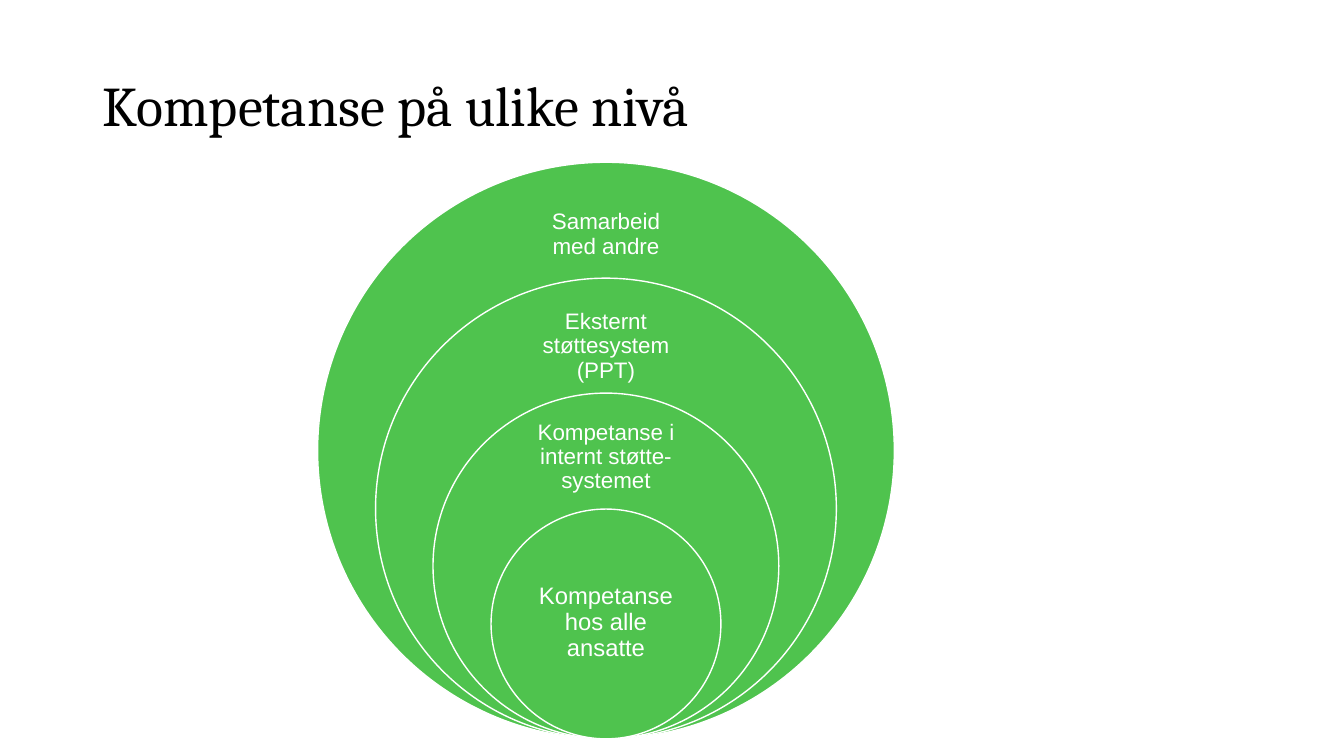
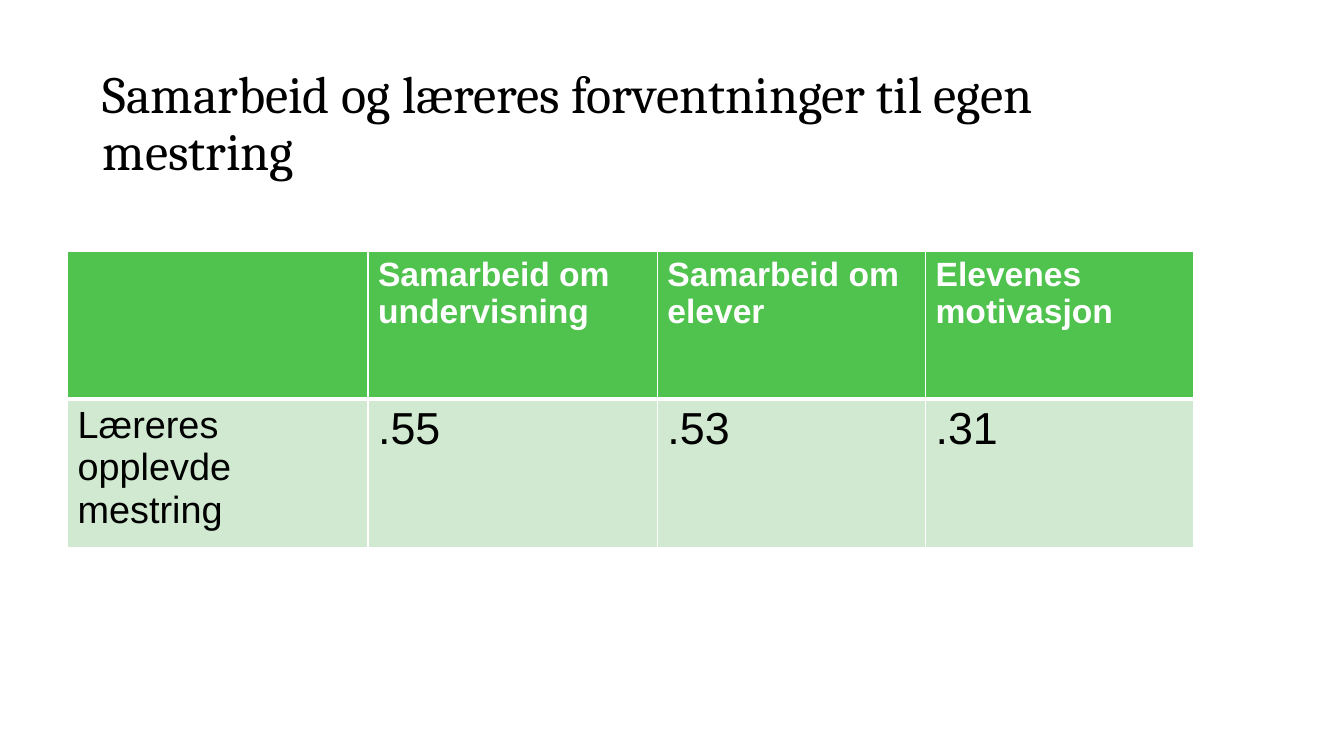
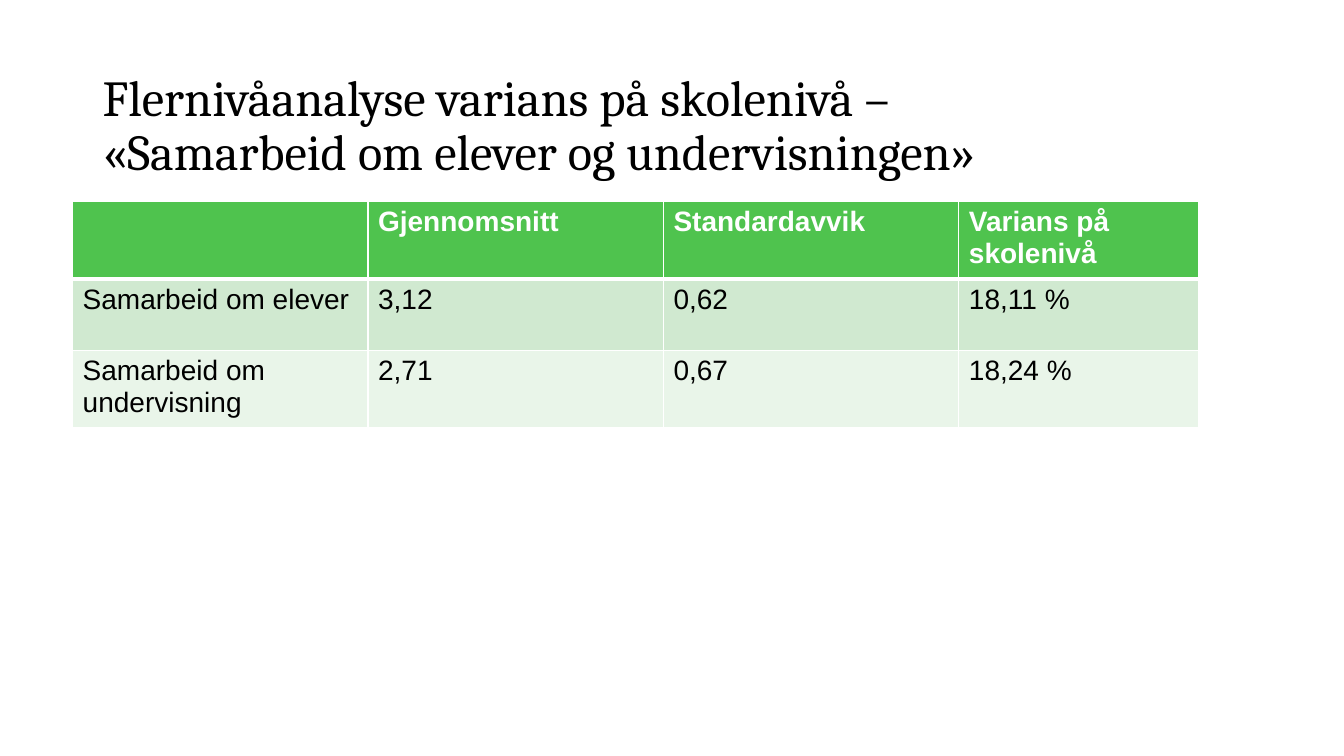
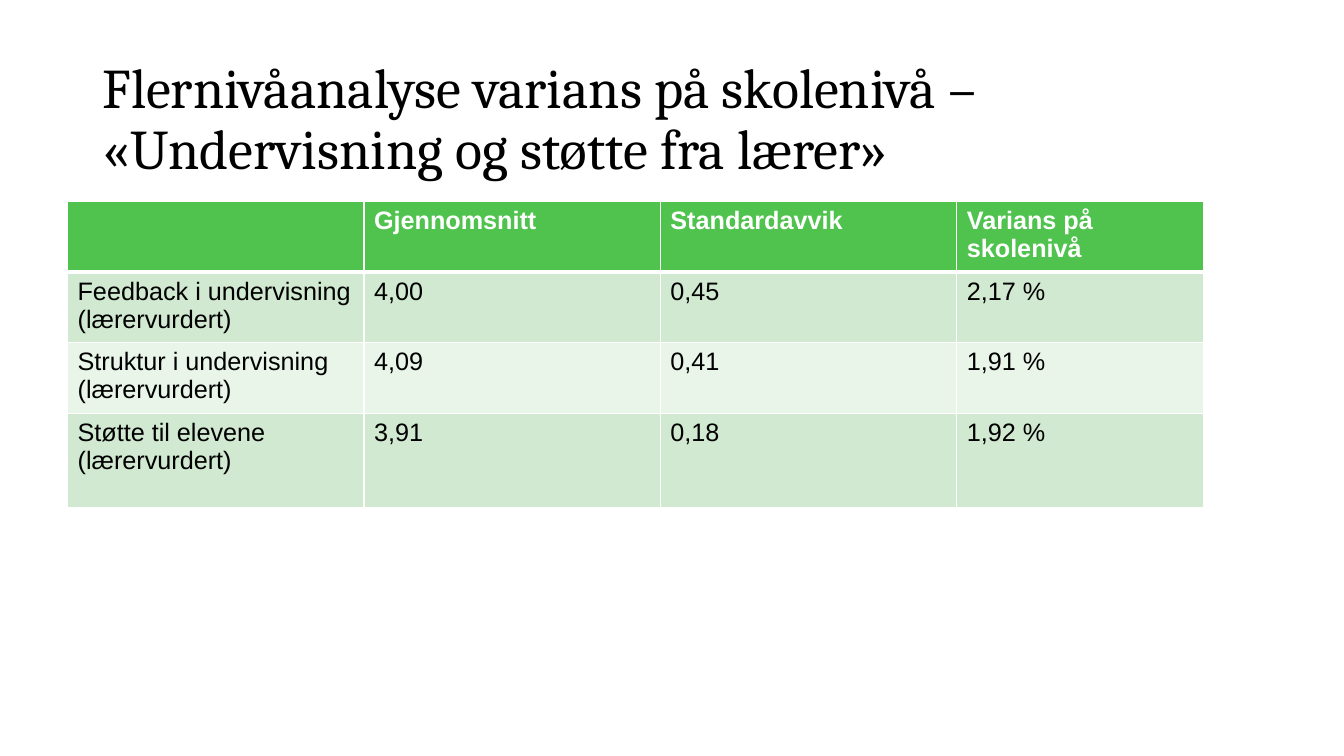
from dataclasses import dataclass

from lxml.etree import SubElement
from pptx import Presentation
from pptx.dml.color import RGBColor
from pptx.enum.shapes import MSO_SHAPE
from pptx.enum.text import MSO_ANCHOR, PP_ALIGN
from pptx.oxml.ns import qn
from pptx.util import Emu, Pt

EMU_PER_PX = 9144  # 100 px to the inch
BLANK_LAYOUT = 6


@dataclass(frozen=True)
class Theme:
    green: str = "4FC34E"
    bands: tuple = ("D0E9D0", "E9F5E9")
    white: str = "FFFFFF"
    black: str = "000000"
    title_font: str = "Cambria"
    body_font: str = "Arial"
    title_size: float = 40
    long_title_size: float = 37.3
    medium_title_size: float = 36
    ring_size: float = 16
    core_size: float = 17
    rule: float = 1
    header_rule: float = 3


THEME = Theme()


def px(length):
    return Emu(round(length * EMU_PER_PX))


def color(code):
    return RGBColor.from_string(code)


def write_text(frame, text, *, size, ink=THEME.black, font=THEME.body_font,
               bold=False, align=PP_ALIGN.LEFT, spacing=None):
    paragraph = frame.paragraphs[0]
    paragraph.alignment = align
    if spacing:
        paragraph.line_spacing = spacing
    run = paragraph.add_run()
    run.text = text
    run.font.size = Pt(size)
    run.font.name = font
    run.font.bold = bold
    run.font.color.rgb = color(ink)


def add_label(slide, box, text, *, anchor, inset=None, **text_format):
    frame = slide.shapes.add_textbox(*map(px, box)).text_frame
    frame.word_wrap = True
    frame.vertical_anchor = anchor
    if inset is not None:
        frame.margin_left = frame.margin_right = px(inset)
        frame.margin_top = frame.margin_bottom = px(inset)
    write_text(frame, text, spacing=0.9, **text_format)


def add_titled_slide(deck, title, size, height=145):
    slide = deck.slides.add_slide(deck.slide_layouts[BLANK_LAYOUT])
    add_label(slide, (92, 40, 1020, height), title, size=size,
              font=THEME.title_font, anchor=MSO_ANCHOR.BOTTOM)
    return slide


def add_circle(slide, left, top, diameter):
    circle = slide.shapes.add_shape(
        MSO_SHAPE.OVAL, px(left), px(top), px(diameter), px(diameter))
    circle.shadow.inherit = False
    circle.fill.solid()
    circle.fill.fore_color.rgb = color(THEME.green)
    circle.line.color.rgb = color(THEME.white)
    circle.line.width = Pt(THEME.rule)


def add_nested_circles(slide, levels):
    """Stack circles on a common lowest point, each a fifth smaller."""
    center, bottom, outer = 601, 733, 572
    for depth, (text, label_top, label_height, size) in enumerate(levels):
        diameter = outer * (5 - depth) // 5
        add_circle(slide, center - diameter / 2, bottom - diameter, diameter)
        add_label(slide, (center - 81, label_top, 162, label_height), text,
                  anchor=MSO_ANCHOR.MIDDLE, inset=13, size=size,
                  ink=THEME.white, align=PP_ALIGN.CENTER)


def draw_borders(cell, bottom_width):
    properties = cell._tc.get_or_add_tcPr()
    widths = {"a:lnL": THEME.rule, "a:lnR": THEME.rule,
              "a:lnT": THEME.rule, "a:lnB": bottom_width}
    for side, width in widths.items():
        border = SubElement(properties, qn(side), w=str(Pt(width)))
        fill = SubElement(border, qn("a:solidFill"))
        SubElement(fill, qn("a:srgbClr"), val=THEME.white)


def add_data_table(slide, left, top, column_widths, row_heights, rows, *,
                   header_size, label_size=None, value_size=None):
    """Draw rows whose first entry is the header; body sizes follow it."""
    table = slide.shapes.add_table(
        len(rows), len(column_widths), px(left), px(top),
        px(sum(column_widths)), px(sum(row_heights))).table
    table.horz_banding = False
    for column, width in zip(table.columns, column_widths):
        column.width = px(width)
    for row, height in zip(table.rows, row_heights):
        row.height = px(height)

    for row_index, entries in enumerate(rows):
        is_header = row_index == 0
        background = THEME.green if is_header else THEME.bands[(row_index - 1) % 2]
        for column_index, entry in enumerate(entries):
            cell = table.cell(row_index, column_index)
            draw_borders(cell, THEME.header_rule if is_header else THEME.rule)
            cell.fill.solid()
            cell.fill.fore_color.rgb = color(background)
            body_size = value_size if column_index else label_size
            if entry:
                write_text(cell.text_frame, entry, bold=is_header,
                           size=header_size if is_header else body_size or header_size,
                           ink=THEME.white if is_header else THEME.black)


def main():
    deck = Presentation()
    deck.slide_width, deck.slide_height = px(1333), px(750)

    levels_slide = add_titled_slide(
        deck, "Kompetanse på ulike nivå", THEME.title_size, height=102)
    add_nested_circles(levels_slide, [
        ("Samarbeid med andre", 190, 86, THEME.ring_size),
        ("Eksternt støttesystem (PPT)", 303, 82, THEME.ring_size),
        ("Kompetanse i internt støtte-systemet", 415, 77, THEME.ring_size),
        ("Kompetanse hos alle ansatte", 561, 114, THEME.core_size),
    ])

    mastery_slide = add_titled_slide(
        deck, "Samarbeid og læreres forventninger til egen mestring",
        THEME.long_title_size)
    add_data_table(mastery_slide, 67, 249, (298, 287, 266, 266), (147, 147), [
        ("", "Samarbeid om undervisning", "Samarbeid om elever", "Elevenes motivasjon"),
        ("Læreres opplevde mestring", ".55", ".53", ".31"),
    ], header_size=24, label_size=27, value_size=32)

    variance_header = ("", "Gjennomsnitt", "Standardavvik", "Varians på skolenivå")

    cooperation_slide = add_titled_slide(
        deck,
        "Flernivåanalyse varians på skolenivå – «Samarbeid om elever og undervisningen»",
        THEME.medium_title_size)
    add_data_table(cooperation_slide, 72, 200, (293, 293, 293, 238), (71, 71, 71), [
        variance_header,
        ("Samarbeid om elever", "3,12", "0,62", "18,11 %"),
        ("Samarbeid om undervisning", "2,71", "0,67", "18,24 %"),
    ], header_size=20)

    teaching_slide = add_titled_slide(
        deck,
        "Flernivåanalyse varians på skolenivå – «Undervisning og støtte fra lærer»",
        THEME.title_size)
    add_data_table(teaching_slide, 67, 200, (294, 294, 294, 245), (66, 66, 66, 93), [
        variance_header,
        ("Feedback i undervisning (lærervurdert)", "4,00", "0,45", "2,17 %"),
        ("Struktur i undervisning (lærervurdert)", "4,09", "0,41", "1,91 %"),
        ("Støtte til elevene (lærervurdert)", "3,91", "0,18", "1,92 %"),
    ], header_size=18)

    deck.save("out.pptx")


if __name__ == "__main__":
    main()
